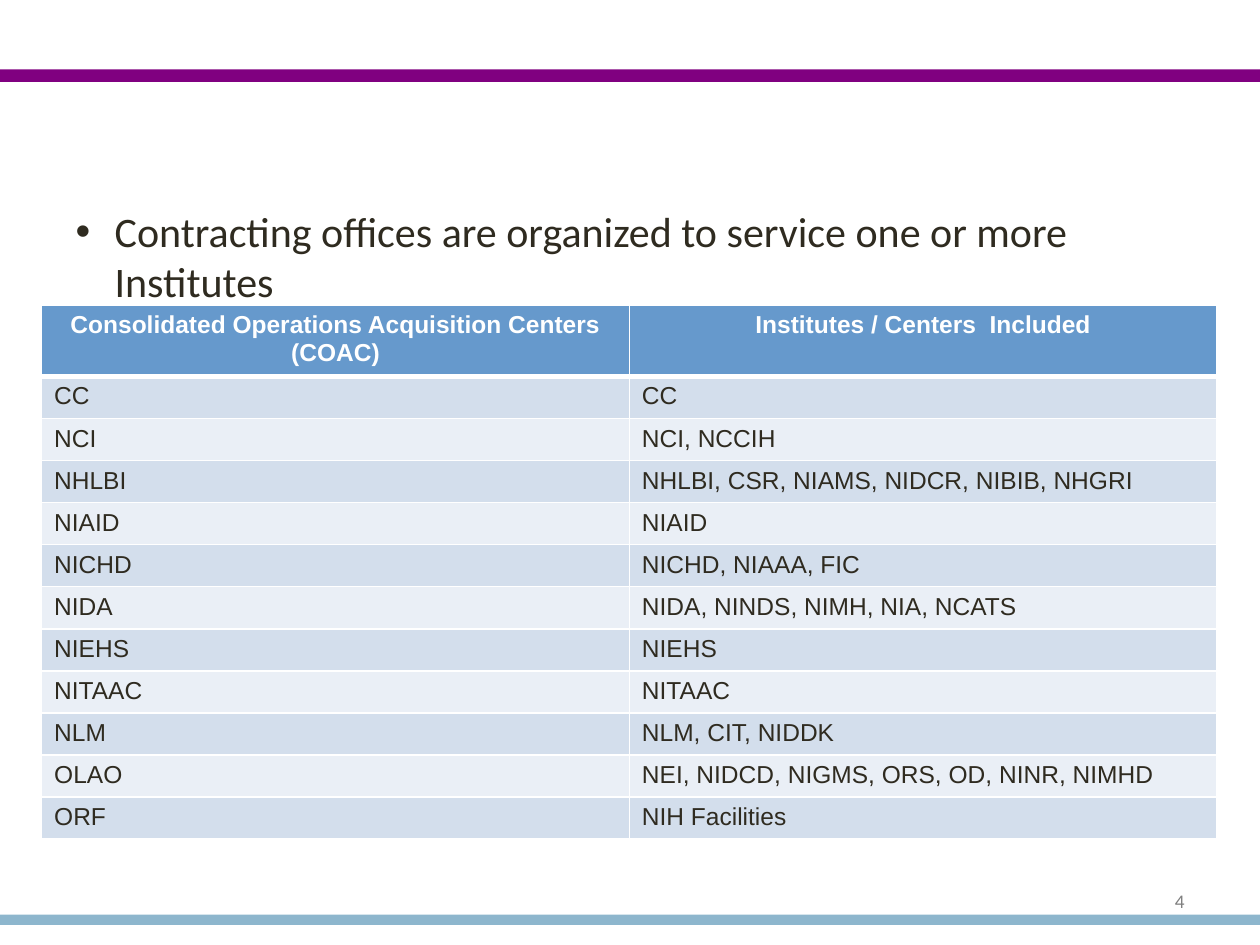
from lxml import etree
from pptx import Presentation
from pptx.dml.color import RGBColor
from pptx.enum import shapes, text
from pptx.oxml import ns
from pptx.util import Inches, Pt

PURPLE = RGBColor(0x80, 0x00, 0x80)
LIGHT_BLUE = RGBColor(0x8D, 0xB6, 0xCD)
HEADER_BLUE = RGBColor(0x66, 0x99, 0xCC)
BANDS = (RGBColor(0xD3, 0xDE, 0xEC), RGBColor(0xEA, 0xEF, 0xF6))
WHITE = RGBColor(0xFF, 0xFF, 0xFF)
DARK = RGBColor(0x2F, 0x2B, 0x20)
GRAY = RGBColor(0x7F, 0x7F, 0x7F)

HEADERS = ("Consolidated Operations Acquisition Centers (COAC)",
           "Institutes / Centers  Included")
CENTERS = [
    ("CC", "CC"),
    ("NCI", "NCI, NCCIH"),
    ("NHLBI", "NHLBI, CSR, NIAMS, NIDCR, NIBIB, NHGRI"),
    ("NIAID", "NIAID"),
    ("NICHD", "NICHD, NIAAA, FIC"),
    ("NIDA", "NIDA, NINDS, NIMH, NIA, NCATS"),
    ("NIEHS", "NIEHS"),
    ("NITAAC", "NITAAC"),
    ("NLM", "NLM, CIT, NIDDK"),
    ("OLAO", "NEI, NIDCD, NIGMS, ORS, OD, NINR, NIMHD"),
    ("ORF", "NIH Facilities"),
]
TABLE_WIDTH, TABLE_HEIGHT, HEADER_HEIGHT = 9.33, 4.18, 0.51


def format_font(paragraph, color, **values):
    for name, value in values.items():
        setattr(paragraph.font, name, value)
    paragraph.font.color.rgb = color


def add_bar(slide, top, height, color):
    bar = slide.shapes.add_shape(shapes.MSO_SHAPE.RECTANGLE, 0, Inches(top),
                                 Inches(10), Inches(height))
    bar.shadow.inherit = False
    bar.fill.solid()
    bar.fill.fore_color.rgb = color
    bar.line.fill.background()


def fill_body(slide):
    body = slide.placeholders[1]
    position = {"left": 0.5, "top": 1.58, "width": 9, "height": 0.53}
    for name, value in position.items():
        setattr(body, name, Inches(value))
    frame = body.text_frame
    frame.text = "Contracting offices are organized to service one or more Institutes"
    frame.auto_size = text.MSO_AUTO_SIZE.NONE
    paragraph = frame.paragraphs[0]
    properties = paragraph._p.get_or_add_pPr()
    properties.set("marL", str(Inches(0.31)))
    properties.set("indent", str(-Inches(0.31)))
    etree.SubElement(properties, ns.qn("a:buChar"), char="•")
    paragraph.space_before = Pt(0)
    format_font(paragraph, DARK, name="Calibri", size=Pt(24))


def add_page_number(slide):
    box = slide.shapes.add_textbox(Inches(7.17), Inches(6.95), Inches(2.33), Inches(0.4))
    frame = box.text_frame
    frame.word_wrap = True
    frame.vertical_anchor = text.MSO_ANCHOR.MIDDLE
    frame.text = "4"
    paragraph = frame.paragraphs[0]
    paragraph.alignment = text.PP_ALIGN.RIGHT
    format_font(paragraph, GRAY, name="Calibri", size=Pt(11))


def set_borders(cell, widths):
    properties = cell._tc.get_or_add_tcPr()
    for index, (side, width) in enumerate(widths.items()):
        line = etree.Element(ns.qn(f"a:{side}"), w=str(Pt(width)))
        fill = etree.SubElement(line, ns.qn("a:solidFill"))
        etree.SubElement(fill, ns.qn("a:srgbClr"), val=str(WHITE))
        properties.insert(index, line)


def add_centers_table(slide):
    rows = [HEADERS, *CENTERS]
    table = slide.shapes.add_table(len(rows), 2, Inches(0.33), Inches(2.42),
                                   Inches(TABLE_WIDTH), Inches(TABLE_HEIGHT)).table
    row_height = (TABLE_HEIGHT - HEADER_HEIGHT) / len(CENTERS)
    for row_index, values in enumerate(rows):
        is_header = row_index == 0
        table.rows[row_index].height = Inches(HEADER_HEIGHT if is_header else row_height)
        for column_index, value in enumerate(values):
            cell = table.cell(row_index, column_index)
            cell.text = value
            cell.fill.solid()
            cell.fill.fore_color.rgb = HEADER_BLUE if is_header else BANDS[(row_index - 1) % 2]
            set_borders(cell, {"lnL": 1, "lnR": 1, "lnT": 3 if row_index == 1 else 1,
                               "lnB": 3 if is_header else 1})
            paragraph = cell.text_frame.paragraphs[0]
            paragraph.alignment = text.PP_ALIGN.CENTER if is_header else text.PP_ALIGN.LEFT
            format_font(paragraph, WHITE if is_header else DARK,
                        name="Arial", size=Pt(14), bold=is_header)


def main():
    presentation = Presentation()
    presentation.slide_width, presentation.slide_height = Inches(10), Inches(7.5)
    # Title and content layout, for its bulleted body; the slide has no title
    slide = presentation.slides.add_slide(presentation.slide_layouts[1])
    title = slide.shapes.title.element
    title.getparent().remove(title)

    # Top and bottom bars
    add_bar(slide, 0.55, 0.1, PURPLE)
    add_bar(slide, 7.26, 0.08, LIGHT_BLUE)

    # Content
    fill_body(slide)
    add_page_number(slide)
    add_centers_table(slide)
    presentation.save("out.pptx")


if __name__ == "__main__":
    main()
